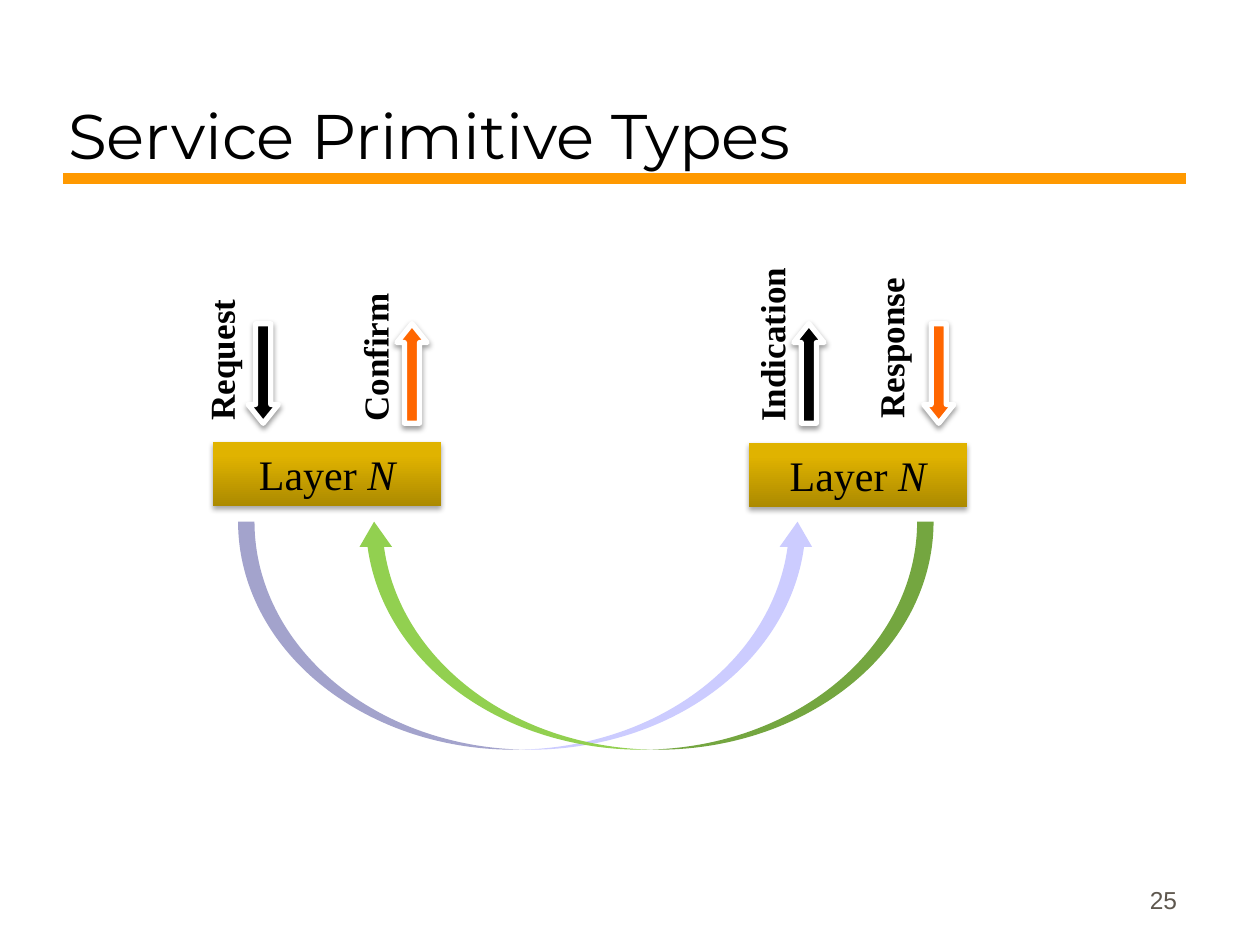
from copy import deepcopy

from lxml import etree
from pptx import Presentation
from pptx.dml.color import RGBColor
from pptx.enum.shapes import MSO_CONNECTOR, MSO_SHAPE
from pptx.enum.text import MSO_ANCHOR, MSO_AUTO_SIZE, PP_ALIGN
from pptx.oxml.ns import qn
from pptx.util import Pt

RECTANGLE = MSO_SHAPE.RECTANGLE
DOWN_ARROW = MSO_SHAPE.DOWN_ARROW
CURVED_ARROW = MSO_SHAPE.CURVED_UP_ARROW
STRAIGHT = MSO_CONNECTOR.STRAIGHT
BOTTOM, MIDDLE = MSO_ANCHOR.BOTTOM, MSO_ANCHOR.MIDDLE
LEFT, CENTER, RIGHT = PP_ALIGN.LEFT, PP_ALIGN.CENTER, PP_ALIGN.RIGHT
NO_FIT, GROW = MSO_AUTO_SIZE.NONE, MSO_AUTO_SIZE.SHAPE_TO_FIT_TEXT

COLORS = {
    "black": "000000",
    "white": "FFFFFF",
    "rule": "FF9900",
    "reply": "FF6600",
    "gold_dark": "AC8A00",
    "gold": "E0B300",
    "gold_light": "E1B400",
    "lavender": "CCCCFF",
    "green": "92D050",
    "number": "5E574E",
}
TITLE_FONT, BODY_FONT, NUMBER_FONT = "Montserrat", "Times New Roman", "Arial"


def rgb(name):
    return RGBColor.from_string(COLORS[name])


class SlideBuilder:
    def __init__(self, slide):
        self.slide = slide
        self.shapes = slide.shapes

    def add_run(self, paragraph, text, font, size, color="black", bold=False, italic=False):
        run = paragraph.add_run()
        run.text = text
        run.font.name = font
        run.font.size = Pt(size)
        run.font.bold = bold
        run.font.italic = italic
        run.font.color.rgb = rgb(color)

    def add_shadow(self, shape, alpha, distance):
        effects = shape._element.spPr.find(qn("a:effectLst"))
        shadow = etree.SubElement(
            effects, qn("a:outerShdw"), blurRad=str(Pt(3.1)), dist=str(Pt(distance)),
            dir="5400000", rotWithShape="0")
        color = etree.SubElement(shadow, qn("a:srgbClr"), val=COLORS["black"])
        etree.SubElement(color, qn("a:alpha"), val=str(alpha * 1000))

    def add_preset(self, preset, left, top, width, height, flip=None):
        shape = self.shapes.add_shape(preset, Pt(left), Pt(top), Pt(width), Pt(height))
        shape.shadow.inherit = False
        shape.line.fill.background()
        if flip:
            shape._element.spPr.xfrm.set(flip, "1")
        return shape

    def title(self, text, left, top, width, height):
        title = self.shapes.title
        title.left, title.top = Pt(left), Pt(top)
        title.width, title.height = Pt(width), Pt(height)
        frame = title.text_frame
        frame.auto_size = NO_FIT
        frame.vertical_anchor = BOTTOM
        frame.paragraphs[0].alignment = LEFT
        self.add_run(frame.paragraphs[0], text, TITLE_FONT, 36)

    def rule(self, left, right, y):
        rule = self.shapes.add_connector(STRAIGHT, Pt(left), Pt(y), Pt(right), Pt(y))
        rule.line.color.rgb = rgb("rule")
        rule.line.width = Pt(6)
        etree.SubElement(rule._element.spPr, qn("a:effectLst"))

    def layer(self, left, top, width):
        box = self.add_preset(RECTANGLE, left, top, width, 36.7)
        box.fill.gradient()
        box.fill.gradient_angle = 90
        stop_list = box._element.spPr.find(qn("a:gradFill")).find(qn("a:gsLst"))
        stop_list.append(deepcopy(stop_list[-1]))
        stops = zip(box.fill.gradient_stops, (0, 0.8, 1), ("gold_dark", "gold", "gold_light"))
        for stop, position, color in stops:
            stop.position = position
            stop.color.rgb = rgb(color)
        self.add_shadow(box, 35, 1.8)
        frame = box.text_frame
        frame.vertical_anchor = MIDDLE
        paragraph = frame.paragraphs[0]
        paragraph.alignment = CENTER
        self.add_run(paragraph, "Layer ", BODY_FONT, 24)
        self.add_run(paragraph, "N", BODY_FONT, 24, italic=True)

    def exchange(self, left, color, flip=None):
        arc = self.add_preset(CURVED_ARROW, left, 298.1, 329, 130.3, flip)
        for index, value in enumerate((0.072, 0.143, 0.111)):
            arc.adjustments[index] = value
        arc.fill.solid()
        arc.fill.fore_color.rgb = rgb(color)

    def primitive_arrow(self, left, color, flip=None):
        arrow = self.add_preset(DOWN_ARROW, left, 185, 17.3, 56.9, flip)
        arrow.adjustments[0] = 0.5
        arrow.adjustments[1] = 0.622
        arrow.fill.solid()
        arrow.fill.fore_color.rgb = rgb(color)
        arrow.line.color.rgb = rgb("white")
        arrow.line.width = Pt(3)
        self.add_shadow(arrow, 38, 1.6)

    def primitive_label(self, text, center_x, center_y, length):
        height = 31.5
        label = self.shapes.add_textbox(
            Pt(center_x - length / 2), Pt(center_y - height / 2), Pt(length), Pt(height))
        label.rotation = 270
        frame = label.text_frame
        frame.word_wrap = False
        frame.auto_size = GROW
        self.add_run(frame.paragraphs[0], text, BODY_FONT, 20, bold=True)

    def page_number(self, text, left, top, width, height):
        number = self.shapes.add_textbox(Pt(left), Pt(top), Pt(width), Pt(height))
        frame = number.text_frame
        frame.word_wrap = True
        frame.vertical_anchor = BOTTOM
        frame.paragraphs[0].alignment = RIGHT
        self.add_run(frame.paragraphs[0], text, NUMBER_FONT, 14, "number")


def main():
    deck = Presentation()
    deck.slide_width, deck.slide_height = Pt(720), Pt(540)
    builder = SlideBuilder(deck.slides.add_slide(deck.slide_layouts[5]))

    builder.rule(36, 678, 102)
    builder.title("Service Primitive Types", 31.7, 12.2, 645.8, 90)
    builder.layer(121.7, 252.5, 130.5)
    builder.layer(428, 253, 124.5)
    builder.exchange(136.1, "lavender")

    primitives = (
        ("Request", 126.4, 205.2, 84.2, 141.8, "black", None),
        ("Indication", 441, 196.6, 103, 453.6, "black", "flipV"),
        ("Response", 509, 198.7, 95, 527.8, "reply", None),
        ("Confirm", 214.2, 203.8, 88.6, 226.8, "reply", "flipV"),
    )
    for text, center_x, center_y, length, arrow_left, color, flip in primitives:
        builder.primitive_arrow(arrow_left, color, flip)
        builder.primitive_label(text, center_x, center_y, length)

    builder.exchange(204.5, "green", "flipH")
    builder.page_number("25", 529.9, 490.3, 149.8, 36)
    deck.save("out.pptx")


if __name__ == "__main__":
    main()
